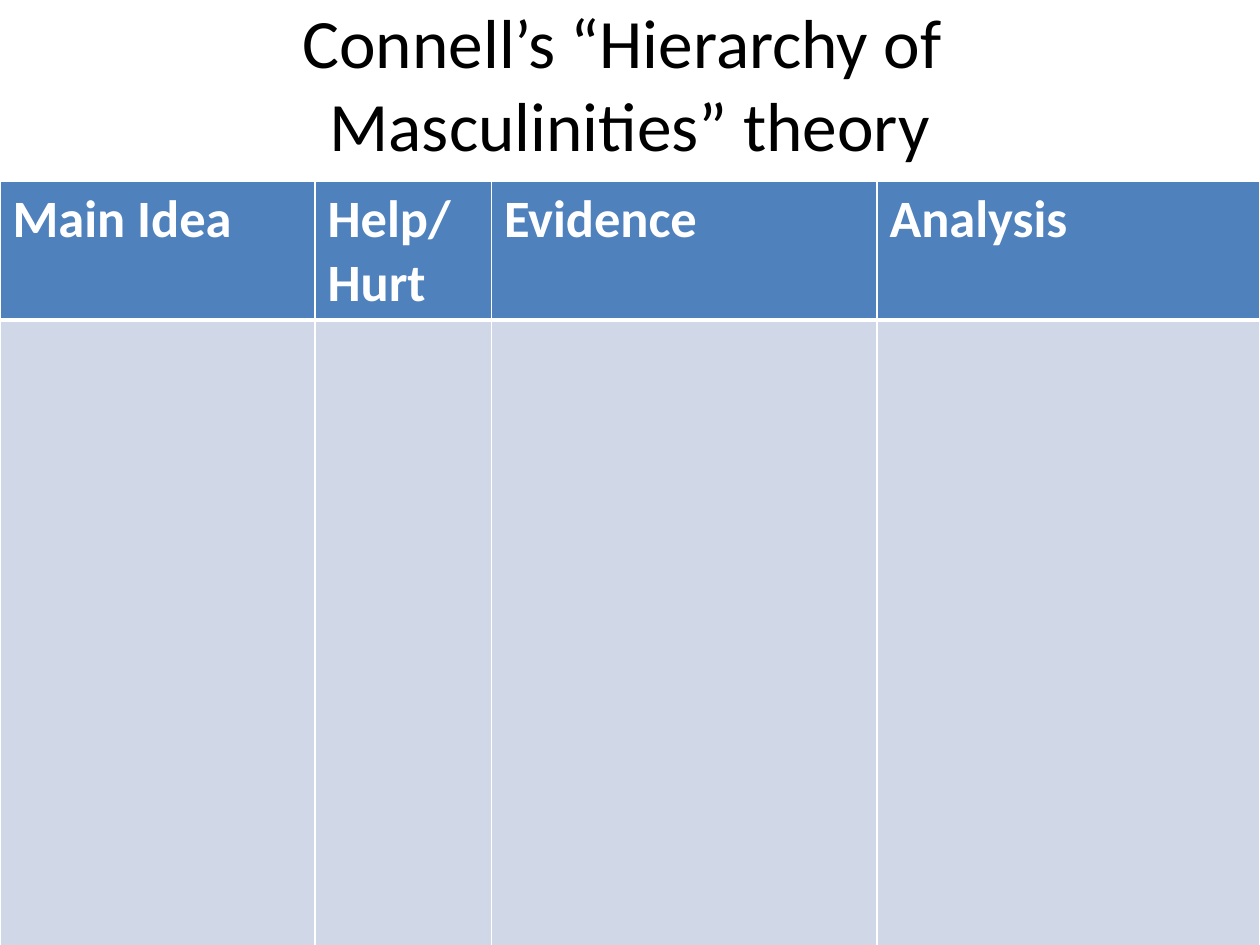
from lxml import etree
from pptx import Presentation
from pptx.dml.color import RGBColor
from pptx.enum.text import MSO_ANCHOR, PP_ALIGN
from pptx.oxml.ns import qn
from pptx.util import Inches, Pt

CENTER = PP_ALIGN.CENTER
MIDDLE = MSO_ANCHOR.MIDDLE
FONT = "Calibri"
HEADERS = ["Main Idea", "Help/Hurt", "Evidence", "Analysis"]
COL_WIDTHS = [2.5, 1.4, 3.06, 3.04]
ROW_HEIGHTS = [1.1, 6.01]
ROW_FILLS = ["4F81BD", "D0D8E8"]
RULE_WIDTH = 3


def color(value):
    return RGBColor.from_string(value)


def add_run(p, text, size, fill, bold=False):
    r = p.add_run()
    r.text = text
    r.font.name = FONT
    r.font.size = Pt(size)
    r.font.bold = bold
    r.font.color.rgb = color(fill)


def add_title(s, lines):
    sp = s.shapes.add_textbox(Inches(0), Inches(0.03), Inches(10), Inches(1.25))
    tf = sp.text_frame
    tf.word_wrap = True
    tf.vertical_anchor = MIDDLE
    p = tf.paragraphs[0]
    p.alignment = CENTER
    for i, line in enumerate(lines):
        if i:
            p.add_line_break()
        add_run(p, line, 39.6, "000000")


def set_borders(cell, widths, line_color):
    tc_pr = cell._tc.get_or_add_tcPr()
    for side, width in widths.items():
        ln = etree.SubElement(tc_pr, qn(f"a:ln{side}"), w=str(Pt(width)))
        fill = etree.SubElement(ln, qn("a:solidFill"))
        etree.SubElement(fill, qn("a:srgbClr"), val=line_color)


def add_analysis_table(s):
    frame = s.shapes.add_table(
        len(ROW_HEIGHTS), len(COL_WIDTHS), Inches(0), Inches(1.44),
        Inches(sum(COL_WIDTHS)), Inches(sum(ROW_HEIGHTS)))
    table = frame.table
    for col, width in zip(table.columns, COL_WIDTHS):
        col.width = Inches(width)
    for i, (row, height) in enumerate(zip(table.rows, ROW_HEIGHTS)):
        row.height = Inches(height)
        widths = {"L": 1, "R": 1, "T": 1, "B": 1}
        widths["T" if i else "B"] = RULE_WIDTH
        for cell in row.cells:
            set_borders(cell, widths, "FFFFFF")
            cell.fill.solid()
            cell.fill.fore_color.rgb = color(ROW_FILLS[i])
    for cell, text in zip(table.rows[0].cells, HEADERS):
        add_run(cell.text_frame.paragraphs[0], text, 30, "FFFFFF", True)


def main():
    prs = Presentation()
    prs.slide_width = Inches(10)
    prs.slide_height = Inches(7.5)
    s = prs.slides.add_slide(prs.slide_layouts[6])
    add_title(s, ["Connell’s “Hierarchy of ", "Masculinities” theory"])
    add_analysis_table(s)
    prs.save("out.pptx")


if __name__ == "__main__":
    main()
